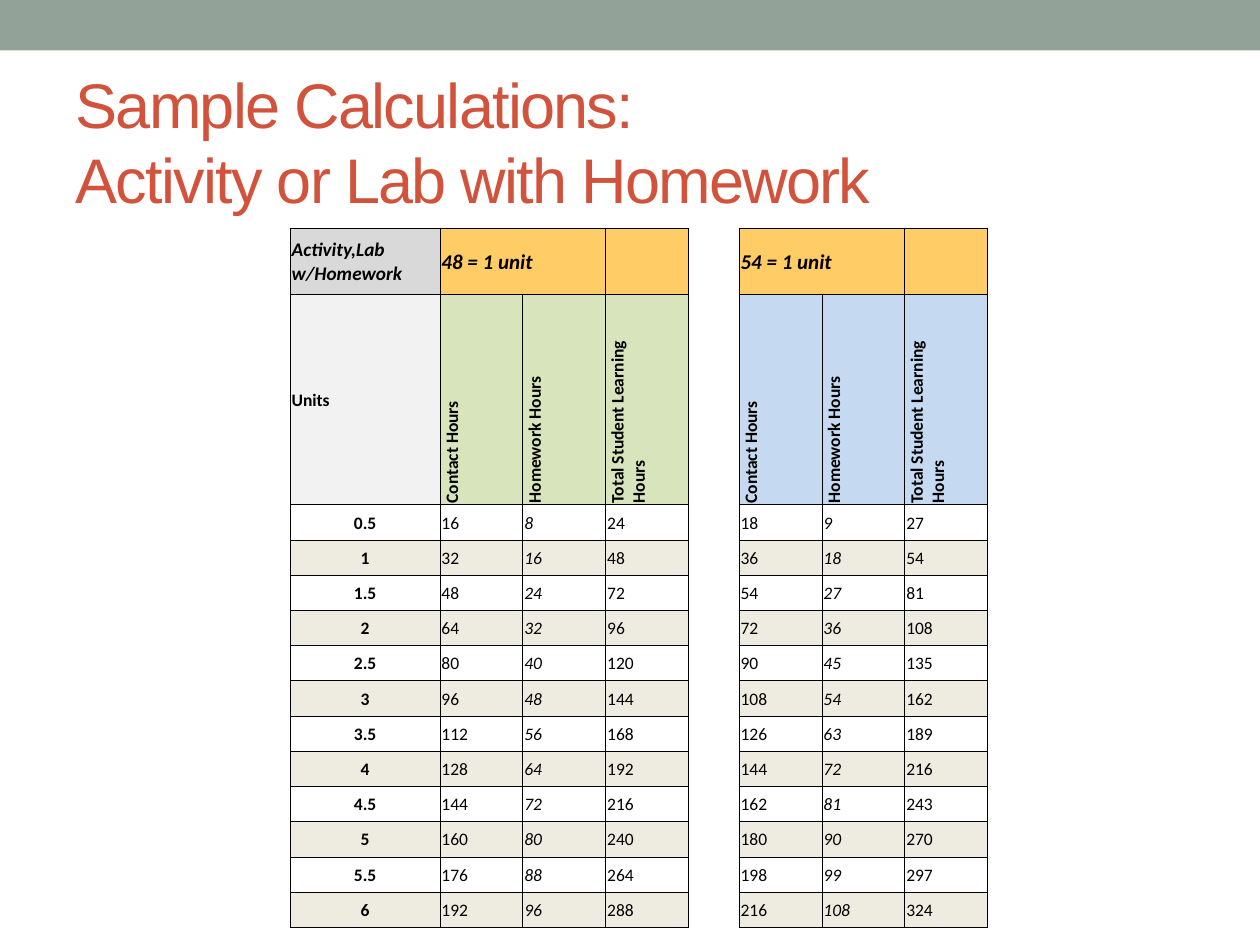
"""Build a slide with a table of contact and homework hours per unit."""
import pptx
import pptx.dml.color
import pptx.enum.shapes
import pptx.enum.text
import pptx.oxml.ns
import pptx.util
import lxml.etree

Cm = pptx.util.Cm
Pt = pptx.util.Pt
align = pptx.enum.text.PP_ALIGN
middle = pptx.enum.text.MSO_ANCHOR.MIDDLE
qn = pptx.oxml.ns.qn


def paint(fill, code):
    fill.solid()
    fill.fore_color.rgb = pptx.dml.color.RGBColor.from_string(code)


def edge(cell, sides):
    for side in sides:
        line = lxml.etree.SubElement(cell._tc.get_or_add_tcPr(), qn("a:ln" + side), w=str(Pt(0.5)))
        solid = lxml.etree.SubElement(line, qn("a:solidFill"))
        lxml.etree.SubElement(solid, qn("a:srgbClr"), val="000000")


deck = pptx.Presentation()
deck.slide_width, deck.slide_height = Cm(25.4), Cm(19.05)
slide = deck.slides.add_slide(deck.slide_layouts[5])

bar = slide.shapes.add_shape(pptx.enum.shapes.MSO_SHAPE.RECTANGLE, 0, 0, Cm(25.4), Cm(1.02))
bar.shadow.inherit = False
paint(bar.fill, "93A299")
bar.line.fill.background()

title = slide.shapes.title
title.left, title.top, title.width, title.height = Cm(1.27), Cm(1.47), Cm(22.86), Cm(2.74)
frame = title.text_frame
frame.auto_size = pptx.enum.text.MSO_AUTO_SIZE.NONE
frame.vertical_anchor = middle
para = frame.paragraphs[0]
para.text = "Sample Calculations: \vActivity or Lab with Homework"
para.alignment = align.LEFT
for run in para.runs:
    run.font.size = Pt(36)
    run.font.name = "Arial"
    paint(run.font.fill, "D2533C")
    run._r.get_or_add_rPr().set("spc", "-100")

heads = ["Contact Hours", "Homework Hours", "Total Student Learning Hours"]
rows = [
    ["Activity,Lab w/Homework", "48 = 1 unit", "", "", "", "54 = 1 unit", "", ""],
    ["Units", *heads, "", *heads],
]
for half in range(1, 13):
    row = [f"{half / 2:g}"]
    for rate in (48, 54):
        total = rate * half // 2
        home = total // 3
        row += [str(total - home), str(home), str(total), ""]
    rows.append(row[:-1])

gap = 4
wides = [3.02, 1.67, 1.67, 1.67, 1.02, 1.67, 1.67, 1.67]
highs = [1.33, 3.89] + [0.71] * 12
shape = slide.shapes.add_table(len(highs), len(wides), Cm(5.85), Cm(4.6), Cm(sum(wides)), Cm(sum(highs)))
table = shape.table
table.first_row = table.horz_banding = False
table._tbl.tblPr[0].text = "{2D5ABB26-0587-4C30-8999-92F81FD0307C}"
for col, wide in zip(table.columns, wides):
    col.width = Cm(wide)
for line, high in zip(table.rows, highs):
    line.height = Cm(high)

tops = ["D9D9D9"] + ["FFCC66"] * 7
subs = ["F2F2F2"] + ["D8E4BC"] * 4 + ["C5D9F1"] * 3
for r, row in enumerate(rows):
    for c, text in enumerate(row):
        cell = table.cell(r, c)
        cell.margin_left = cell.margin_right = cell.margin_top = Cm(0.03)
        cell.margin_bottom = 0
        cell.vertical_anchor = middle
        edge(cell, "LR" if c == gap else "LRTB")
        if c == gap:
            cell.fill.background()
        elif r < 2:
            paint(cell.fill, (tops, subs)[r][c])
        elif r % 2:
            paint(cell.fill, "EEECE1")
        else:
            cell.fill.background()
        para = cell.text_frame.paragraphs[0]
        if not text:
            lxml.etree.SubElement(para._p, qn("a:endParaRPr"), sz="1000")
            continue
        para.text = text
        if r == 1 and c:
            cell._tc.tcPr.set("vert", "vert270")
        else:
            para.alignment = align.CENTER if r > 1 and c == 0 else align.JUSTIFY
        font = para.runs[0].font
        font.name = "Calibri"
        font.size = Pt(10 if r else 12 if c else 11)
        font.bold = r < 2 or c == 0
        font.italic = r == 0 or (r > 1 and c in (2, 6))
        paint(font.fill, "000000")

for c in (1, 5):
    table.cell(0, c).merge(table.cell(0, c + 1))

deck.save("out.pptx")
